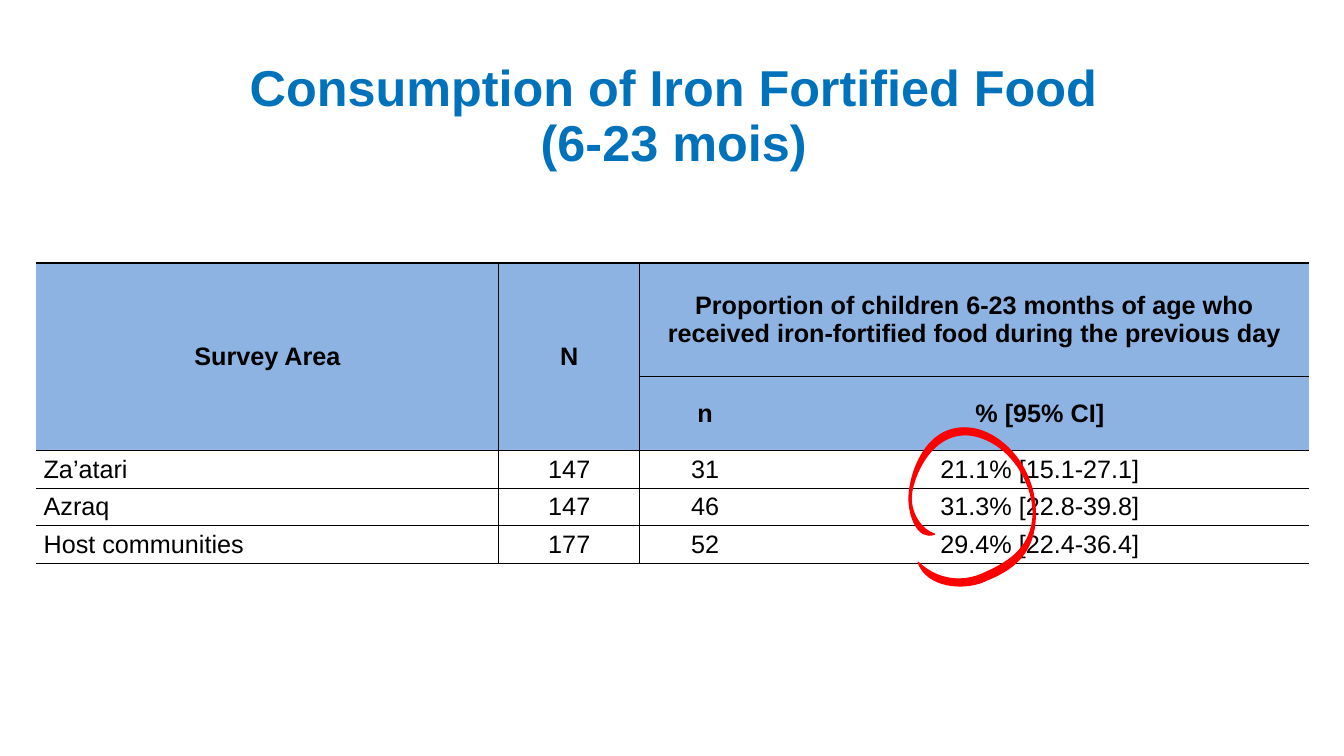
from lxml.etree import SubElement
from pptx import Presentation
from pptx.dml.color import RGBColor as Rgb
from pptx.enum.text import MSO_ANCHOR as Anchor, PP_ALIGN as Align
from pptx.oxml.ns import qn
from pptx.util import Cm, Pt

COLORS = {"title": "0072BC", "header": "8DB3E2", "ink": "000000", "mark": "FF0000"}

COLUMN_WIDTHS = [11.66, 3.55, 3.3, 13.57]
ROW_HEIGHTS = [2.86, 1.86, 0.95, 0.95, 0.95]
HEADER_ROWS = 2
SURVEY = [
    ["Survey Area", "N", "Proportion of children 6-23 months of age who "
     "received iron-fortified food during the previous day", ""],
    ["", "", "n", "% [95% CI]"],
    ["Za’atari", "147", "31", "21.1% [15.1-27.1]"],
    ["Azraq", "147", "46", "31.3% [22.8-39.8]"],
    ["Host communities", "177", "52", "29.4% [22.4-36.4]"],
]
MERGES = [((0, 0), (1, 0)), ((0, 1), (1, 1)), ((0, 2), (0, 3))]

MARK_START = (23.14, 14.17)
MARK_CURVES = [
    [(23.65, 14.66), (24.31, 14.68), (24.79, 14.45)],
    [(25.48, 14.15), (26.01, 13.77), (26.04, 12.95)],
    [(26.04, 12.14), (25.45, 11.15), (24.51, 10.97)],
    [(23.44, 10.8), (22.96, 12.12), (22.96, 12.55)],
    [(22.96, 12.95), (23.22, 13.36), (23.55, 13.46)],
    [(23.14, 13.61), (22.91, 13.03), (22.91, 12.55)],
    [(22.91, 12.04), (23.29, 10.62), (24.51, 10.8)],
    [(25.25, 10.92), (26.09, 11.76), (26.09, 12.95)],
    [(26.09, 14.15), (25.25, 14.45), (24.77, 14.66)],
    [(24.28, 14.86), (23.37, 14.81), (23.14, 14.17)],
]


def apply(target, values):
    for name, value in values.items():
        setattr(target, name, value)


def row_rule(edge, column):
    if edge == 1 and column < 2:
        return None
    return 1.5 if edge in (0, HEADER_ROWS, len(SURVEY)) else 1


def column_rule(edge):
    return 1 if edge in (1, 2) else None


class SlideBuilder:
    font_name = "Arial"

    def __init__(self, slide):
        self.slide = slide

    def style(self, paragraph, size, color, bold, align):
        paragraph.alignment = align
        apply(paragraph.font, {"name": self.font_name, "size": Pt(size), "bold": bold})
        paragraph.font.color.rgb = Rgb.from_string(COLORS[color])

    def title(self, lines, left, top, width, height):
        box = self.slide.shapes.add_textbox(Cm(left), Cm(top), Cm(width), Cm(height))
        frame = box.text_frame
        apply(frame, {"word_wrap": True, "vertical_anchor": Anchor.BOTTOM,
                      "margin_left": 0, "margin_right": 0,
                      "margin_top": 0, "margin_bottom": 0})
        heading = frame.paragraphs[0]
        for number, line in enumerate(lines):
            if number:
                heading.add_line_break()
            heading.add_run().text = line
        heading.line_spacing = 0.9
        self.style(heading, 36, "title", True, Align.CENTER)

    def border(self, cell, side, weight):
        properties = cell._tc.get_or_add_tcPr()
        line = SubElement(properties, qn(f"a:ln{side}"))
        if weight is None:
            line.set("w", "0")
            SubElement(line, qn("a:noFill"))
            return
        line.set("w", str(Pt(weight)))
        fill = SubElement(line, qn("a:solidFill"))
        SubElement(fill, qn("a:srgbClr")).set("val", COLORS["ink"])

    def cell(self, cell, text, row, column):
        header = row < HEADER_ROWS
        apply(cell, {"margin_left": Cm(0.19), "margin_right": Cm(0.19),
                     "margin_top": 0, "margin_bottom": 0,
                     "vertical_anchor": Anchor.MIDDLE})
        rules = {"L": column_rule(column),
                 "R": column_rule(column + cell.span_width),
                 "T": row_rule(row, column),
                 "B": row_rule(row + cell.span_height, column)}
        for side, weight in rules.items():
            self.border(cell, side, weight)
        if header:
            cell.fill.solid()
            cell.fill.fore_color.rgb = Rgb.from_string(COLORS["header"])
        else:
            cell.fill.background()
        entry = cell.text_frame.paragraphs[0]
        if text:
            entry.add_run().text = text
        align = Align.CENTER if header or column else Align.LEFT
        self.style(entry, 18, "ink", header, align)

    def table(self, rows, left, top):
        table = self.slide.shapes.add_table(
            len(rows), len(COLUMN_WIDTHS), Cm(left), Cm(top),
            Cm(sum(COLUMN_WIDTHS)), Cm(sum(ROW_HEIGHTS))).table
        apply(table, {"first_row": False, "horz_banding": False})
        for column, width in zip(table.columns, COLUMN_WIDTHS):
            column.width = Cm(width)
        for row, height in zip(table.rows, ROW_HEIGHTS):
            row.height = Cm(height)
        for first, last in MERGES:
            table.cell(*first).merge(table.cell(*last))
        for r, row in enumerate(rows):
            for c, text in enumerate(row):
                self.cell(table.cell(r, c), text, r, c)

    def bend(self, shape):
        segments = list(shape._element.iter(qn("a:lnTo")))
        outline = segments[0].getparent()
        closing = outline.find(qn("a:close"))
        for first in range(0, len(segments), 3):
            curve = SubElement(outline, qn("a:cubicBezTo"))
            for segment in segments[first:first + 3]:
                curve.append(segment[0])
                outline.remove(segment)
        outline.append(closing)

    def mark(self, start, curves):
        outline = self.slide.shapes.build_freeform(*(Cm(value) for value in start))
        outline.add_line_segments(
            [(Cm(x), Cm(y)) for curve in curves for x, y in curve], close=True)
        ring = outline.convert_to_shape()
        self.bend(ring)
        ring.shadow.inherit = False
        ring.fill.solid()
        for paint in (ring.fill.fore_color, ring.line.color):
            paint.rgb = Rgb.from_string(COLORS["mark"])
        ring.line.width = Pt(1)


def main():
    deck = Presentation()
    apply(deck, {"slide_width": Cm(33.87), "slide_height": Cm(19.05)})
    builder = SlideBuilder(deck.slides.add_slide(deck.slide_layouts[6]))
    builder.title(["Consumption of Iron Fortified Food", "(6-23 mois)"],
                  0.76, 0.76, 32.44, 3.58)
    builder.table(SURVEY, 0.91, 6.63)
    builder.mark(MARK_START, MARK_CURVES)
    deck.save("out.pptx")


if __name__ == "__main__":
    main()
